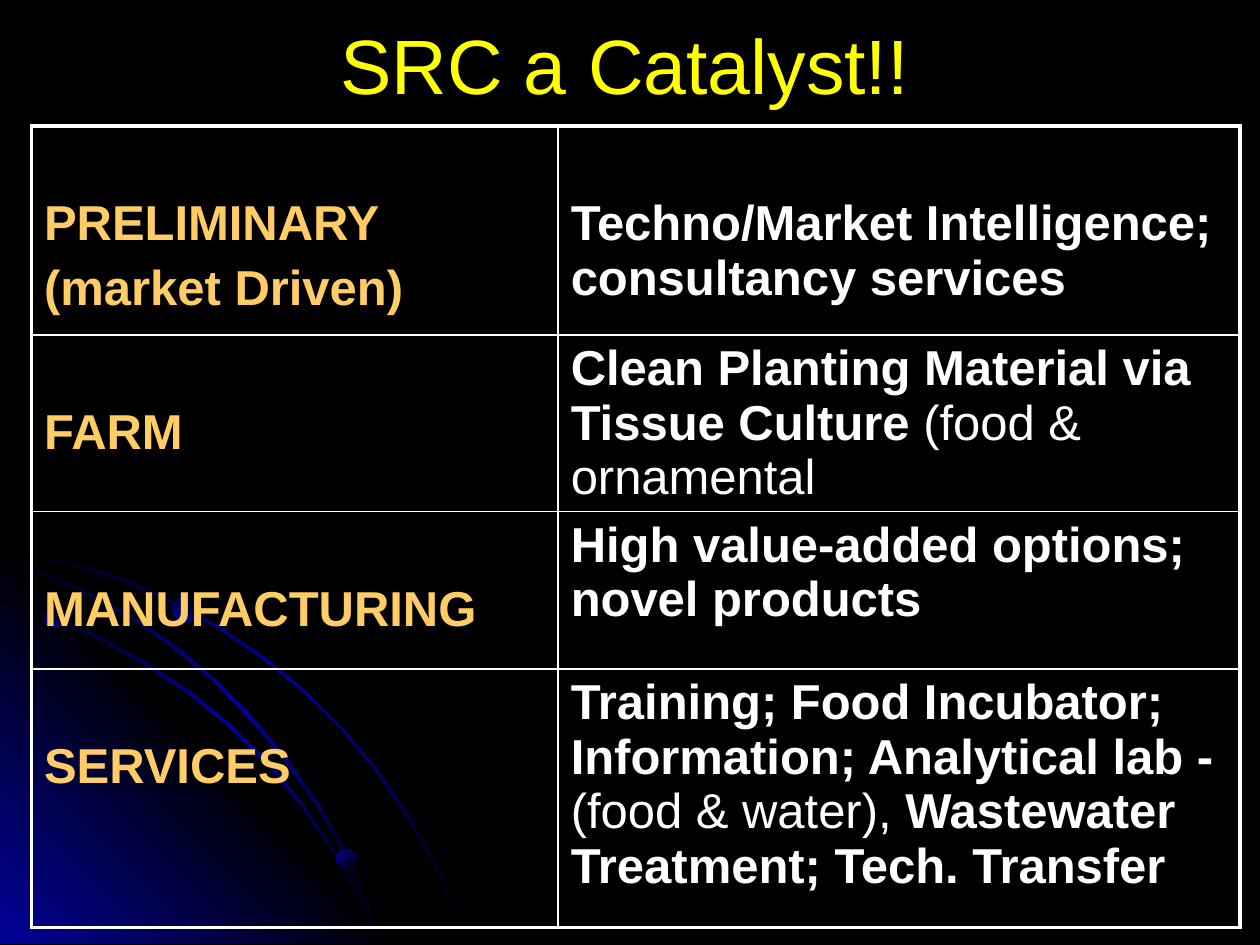
from pptx import Presentation, util as u
from pptx.dml.color import RGBColor
from pptx.enum import shapes, text
from pptx.oxml import parse_xml
from pptx.oxml.ns import nsdecls

Inches, Pt = u.Inches, u.Pt
THEME = {"black": "000000", "blue": "010199", "white": "FFFFFF", "title": "FFFF00",
         "label": "FFCC66", "font": "Arial", "title_size": 44, "body_size": 28,
         "thin": 1, "thick": 2.25}
BLACK, BLUE = THEME["black"], THEME["blue"]


def paint_gradient(shape, colors, angle):
    """Fill with evenly spaced colours, without outline or shadow."""
    stops = "".join(
        f'<a:gs pos="{100000 * i // (len(colors) - 1)}"><a:srgbClr val="{color}"/></a:gs>'
        for i, color in enumerate(colors))
    shape.shadow.inherit = False
    shape.line.fill.background()
    shape.fill.background()
    properties = shape.fill._xPr
    properties.replace(properties.find("{*}noFill"), parse_xml(
        f'<a:gradFill {nsdecls("a")} rotWithShape="1"><a:gsLst>{stops}</a:gsLst>'
        f'<a:lin ang="{angle * 60000}" scaled="1"/></a:gradFill>'))


def add_span(para, words, size, color, bold=False):
    span = para.add_run()
    span.text = words
    for name, value in {"name": THEME["font"], "size": Pt(size), "bold": bold}.items():
        setattr(span.font, name, value)
    span.font.color.rgb = RGBColor.from_string(color)


deck = Presentation()
deck.slide_width, deck.slide_height = Inches(10), Inches(7.5)
page = deck.slides.add_slide(deck.slide_layouts[5])
page.background.fill.solid()
page.background.fill.fore_color.rgb = RGBColor.from_string(BLACK)

# Background: glowing corner and three orbit ribbons
OUTER_ORBIT = [
    (0.57, 4.47), (0.28, 4.41), (0, 4.35), (0, 4.38), (0.28, 4.43), (0.56, 4.49),
    (0.97, 4.61), (1.35, 4.78), (1.73, 4.99), (2.08, 5.23), (2.41, 5.49), (2.71, 5.79),
    (2.98, 6.12), (3.23, 6.49), (3.37, 6.73), (3.5, 6.98), (3.6, 7.23), (3.7, 7.49),
    (3.72, 7.49), (3.62, 7.23), (3.52, 6.98), (3.39, 6.73), (3.25, 6.48), (3, 6.11),
    (2.72, 5.78), (2.42, 5.48), (2.09, 5.21), (1.74, 4.97), (1.36, 4.77), (0.98, 4.59)]
CORNER = [(3.22, 7.49), (0, 7.49), (0, 4.27)]
INNER_ORBIT = [
    (2.85, 7.14), (2.94, 7.32), (3.01, 7.49), (3.03, 7.49), (2.96, 7.3), (2.86, 7.12),
    (2.66, 6.76), (2.42, 6.4), (2.15, 6.06), (1.84, 5.76), (1.52, 5.49), (1.17, 5.26),
    (0.79, 5.05), (0.41, 4.88), (0, 4.75), (0, 4.77), (0.39, 4.9), (0.77, 5.07),
    (1.15, 5.28), (1.5, 5.51), (1.83, 5.78), (2.13, 6.08), (2.4, 6.41), (2.65, 6.77)]
MIDDLE_ORBIT = [
    (0, 4.42), (0, 4.44), (0.36, 4.57), (0.74, 4.75), (1.09, 4.94), (1.42, 5.18),
    (1.73, 5.44), (2.02, 5.75), (2.27, 6.05), (2.52, 6.41), (2.67, 6.67), (2.8, 6.94),
    (2.92, 7.22), (3.01, 7.49), (3.03, 7.49), (2.94, 7.2), (2.82, 6.93), (2.69, 6.65),
    (2.54, 6.39), (2.29, 6.03), (2.04, 5.73), (1.75, 5.43), (1.44, 5.16), (1.11, 4.93),
    (0.76, 4.73), (0.39, 4.55)]
RIBBON = [BLACK, BLUE, BLACK]
for outline, colors, angle in [(OUTER_ORBIT, RIBBON, 45), (CORNER, [BLUE, BLACK, BLUE], 315),
                               (INNER_ORBIT, RIBBON, 45), (MIDDLE_ORBIT, RIBBON, 45)]:
    points = [(Inches(x), Inches(y)) for x, y in outline]
    builder = page.shapes.build_freeform(*points[0])
    builder.add_line_segments(points[1:], close=True)
    paint_gradient(builder.convert_to_shape(), colors, angle)

# Planets on the orbits
for left, top, size, angle in [(0.36, 4.83, 0.15, 315), (2.67, 6.74, 0.16, 45),
                               (1.37, 4.73, 0.21, 315)]:
    planet = page.shapes.add_shape(shapes.MSO_SHAPE.OVAL, Inches(left), Inches(top),
                                   Inches(size), Inches(size))
    paint_gradient(planet, [BLUE, BLACK], angle)

# Title
title = page.shapes.title
for name, value in {"left": 0.5, "top": 0.17, "width": 8.92, "height": 0.67}.items():
    setattr(title, name, Inches(value))
frame = title.text_frame
for name, value in {"auto_size": text.MSO_AUTO_SIZE.NONE, "word_wrap": True,
                    "vertical_anchor": text.MSO_ANCHOR.MIDDLE}.items():
    setattr(frame, name, value)
frame.paragraphs[0].alignment = text.PP_ALIGN.CENTER
add_span(frame.paragraphs[0], "SRC a Catalyst!!", THEME["title_size"], THEME["title"])

# Table: each cell is a list of paragraphs, each paragraph a list of (words, bold)
ROWS = [
    (1.66, [[("PRELIMINARY", True)], [("(market Driven)", True)]],
     [[("Techno/Market Intelligence; consultancy services", True)]]),
    (1.3, [[("FARM", True)]],
     [[("Clean Planting Material via Tissue Culture ", True), ("(food & ornamental", False)]]),
    (1.25, [[("MANUFACTURING", True)]],
     [[("High value-added options; novel products", True)]]),
    (2.05, [[("SERVICES", True)]],
     [[("Training; Food Incubator; Information; Analytical lab -", True),
       ("(food & water), ", False), ("Wastewater Treatment; Tech. Transfer", True)]]),
]
WIDTHS = [4.18, 5.41]
table = page.shapes.add_table(
    len(ROWS), len(WIDTHS), Inches(0.25), Inches(1), Inches(sum(WIDTHS)),
    Inches(sum(row[0] for row in ROWS))).table
table.first_row = table.horz_banding = False
for column, width in zip(table.columns, WIDTHS):
    column.width = Inches(width)

for r, (height, *cells) in enumerate(ROWS):
    table.rows[r].height = Inches(height)
    for c, paragraphs in enumerate(cells):
        cell = table.cell(r, c)
        # Labels and the first row start one line lower
        cell.margin_top = Inches(0.56 if c == 0 or r == 0 else 0.05)
        for i, spans in enumerate(paragraphs):
            frame = cell.text_frame
            para = frame.add_paragraph() if i else frame.paragraphs[0]
            para.space_before = Pt(5.6 if i else 0)
            for words, bold in spans:
                add_span(para, words, THEME["body_size"],
                         THEME["white"] if c else THEME["label"], bold)
        # Thick frame outside, thin rules inside
        outer = {"L": c == 0, "R": c == len(WIDTHS) - 1, "T": r == 0, "B": r == len(ROWS) - 1}
        for side, is_outer in outer.items():
            weight = Pt(THEME["thick"] if is_outer else THEME["thin"])
            cell._tc.get_or_add_tcPr().append(parse_xml(
                f'<a:ln{side} {nsdecls("a")} w="{weight}"><a:solidFill>'
                f'<a:srgbClr val="{THEME["white"]}"/></a:solidFill></a:ln{side}>'))
        cell.fill.background()

deck.save("out.pptx")
